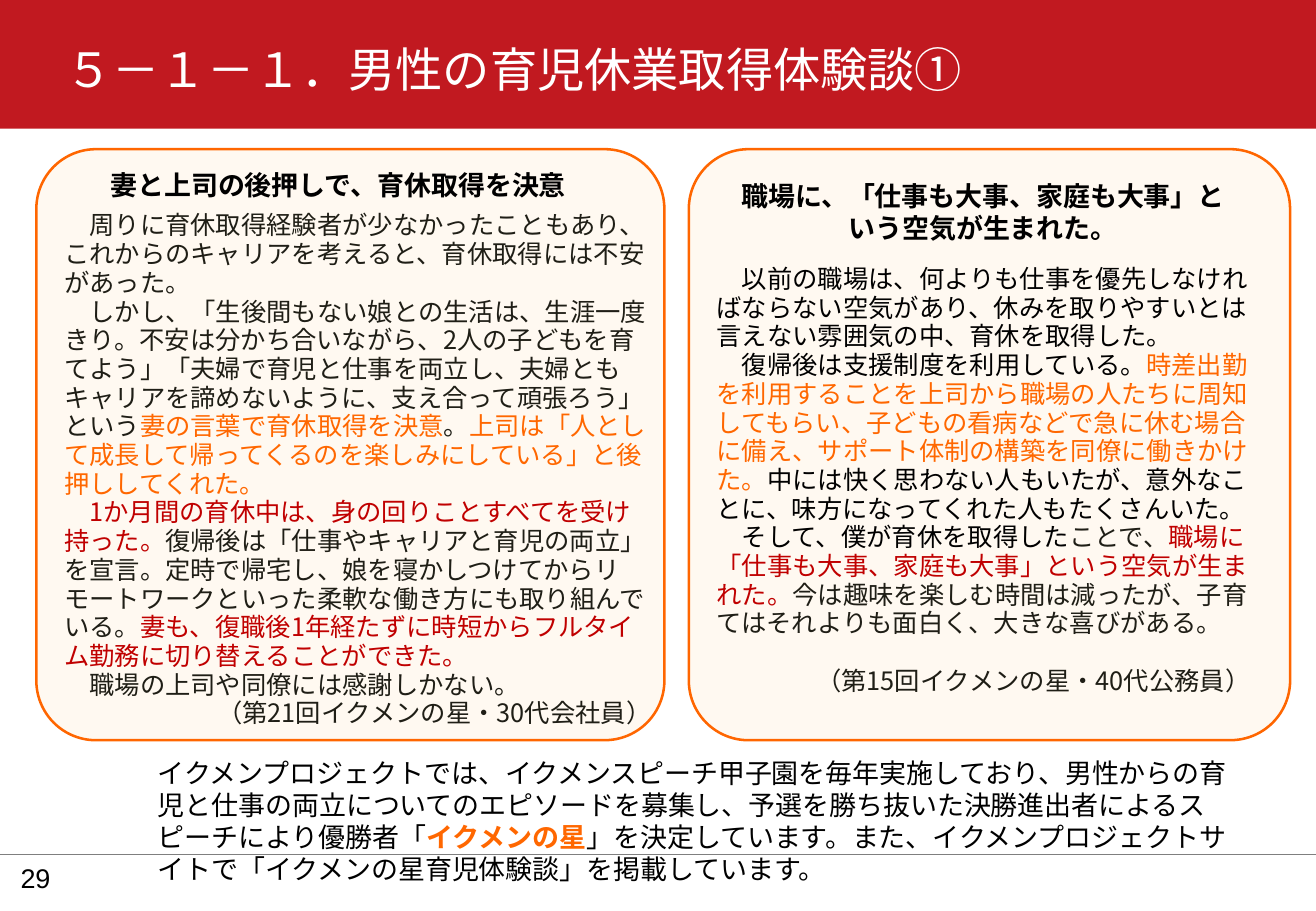
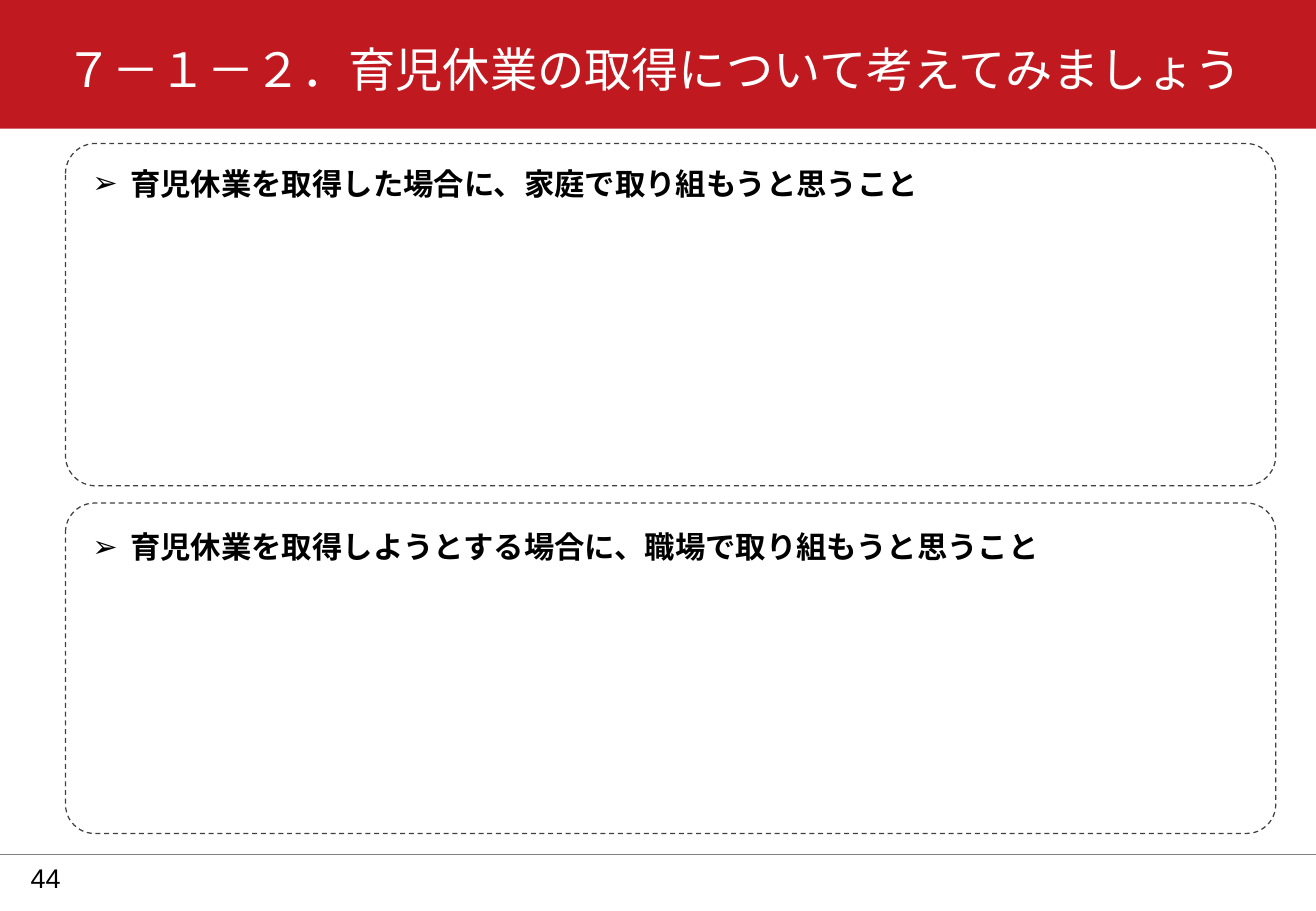
"""Build two slides on childcare leave: experience stories and a reflection sheet."""
from dataclasses import dataclass

from lxml import etree
from pptx import Presentation
from pptx.dml.color import RGBColor
from pptx.enum.dml import MSO_LINE
from pptx.enum.lang import MSO_LANGUAGE_ID
from pptx.enum.shapes import MSO_CONNECTOR, MSO_SHAPE
from pptx.enum.text import MSO_ANCHOR, MSO_AUTO_SIZE, PP_ALIGN
from pptx.oxml.ns import qn
from pptx.util import Cm, Pt

ROUNDED, RECTANGLE = MSO_SHAPE.ROUNDED_RECTANGLE, MSO_SHAPE.RECTANGLE
STRAIGHT, DASH = MSO_CONNECTOR.STRAIGHT, MSO_LINE.DASH
TOP, MIDDLE = MSO_ANCHOR.TOP, MSO_ANCHOR.MIDDLE
LEFT, CENTER, RIGHT = PP_ALIGN.LEFT, PP_ALIGN.CENTER, PP_ALIGN.RIGHT
FIXED = MSO_AUTO_SIZE.NONE
JAPANESE = MSO_LANGUAGE_ID.JAPANESE


@dataclass(frozen=True)
class Style:
    size: float
    leading: float
    bold: bool = False
    latin: str = "Noto Sans CJK JP"


@dataclass(frozen=True)
class Theme:
    red: str = "C11920"
    white: str = "FFFFFF"
    black: str = "000000"
    ink: str = "1F1E16"
    orange: str = "FF6700"
    crimson: str = "C00000"
    card_fill: str = "FFECD3"
    card_line: str = "FF6600"
    dash_line: str = "404040"
    rule: str = "7F7F7F"
    east_asian: str = "Noto Sans CJK JP"
    title: Style = Style(28, 36, latin="Arial")
    number: Style = Style(16, 19, latin="Arial")
    heading: Style = Style(16, 19, True)
    story: Style = Style(15, 17)
    closing: Style = Style(16, 19)
    prompt: Style = Style(18, 23, True)


THEME = Theme()
BLACK, INK, ORANGE, CRIMSON = THEME.black, THEME.ink, THEME.orange, THEME.crimson

WIDTH, HEIGHT = 27.51, 19.05
BAND_HEIGHT, RULE_TOP = 2.69, 17.86
TITLE_AREA = (1.37, 0.76, 26.14, 1.8)
TITLE_INSETS = (0, 0, 0, 0.15)
NUMBER_INSETS = (0, 0.13, 0, 0.13)
TEXT_INSETS = (0.25, 0.13, 0.25, 0.13)
PROMPT_INSETS = (0, 0.15, 0, 0.15)
CLOSING_AREA = (3.05, 15.7, 23.09, 3.2)
STORY_INDENT, BULLET_INDENT = 0.53, 0.79

STORY_PAGE = {"title": "５－１－１．男性の育児休業取得体験談①", "number": "29", "number_left": 0.43}
PROMPT_PAGE = {"title": "７－１－２．育児休業の取得について考えてみましょう", "number": "44", "number_left": 0.64}

STORIES = [
    {
        "card": (0.76, 3.12, 13.13, 12.36),
        "heading_area": (1.73, 3.4, 10.69, 1.1),
        "story_area": (1.09, 4.29, 12.78, 10.6),
        "heading": "妻と上司の後押しで、育休取得を決意",
        "paragraphs": [
            [("周りに育休取得経験者が少なかったこともあり、これからのキャリアを考えると、育休取得には不安があった。", INK)],
            [("しかし、「生後間もない娘との生活は、生涯一度きり。不安は分かち合いながら、2人の子どもを育てよう」"
              "「夫婦で育児と仕事を両立し、夫婦ともキャリアを諦めないように、支え合って頑張ろう」という", INK),
             ("妻の言葉で育休取得を決意", ORANGE),
             ("。", INK),
             ("上司は「人として成長して帰ってくるのを楽しみにしている」と後押ししてくれた。", ORANGE)],
            [("1か月間の育休中は、身の回りことすべてを受け持った。", CRIMSON),
             ("復帰後は「仕事やキャリアと育児の両立」を宣言。定時で帰宅し、娘を寝かしつけてから"
              "リモートワークといった柔軟な働き方にも取り組んでいる。", INK),
             ("妻も、復職後1年経たずに時短からフルタイム勤務に切り替えることができた。", CRIMSON)],
            [("職場の上司や同僚には感謝しかない。", INK)],
        ],
        "source": "（第21回イクメンの星・30代会社員）",
        "source_gap": 0,
    },
    {
        "card": (14.4, 3.12, 12.57, 12.36),
        "heading_area": (15.21, 3.63, 10.69, 1.7),
        "story_area": (14.73, 5.41, 11.66, 9.4),
        "heading": "職場に、「仕事も大事、家庭も大事」という空気が生まれた。",
        "paragraphs": [
            [("以前の職場は、何よりも仕事を優先しなければならない空気があり、休みを取りやすいとは言えない"
              "雰囲気の中、育休を取得した。", BLACK)],
            [("復帰後は支援制度を利用している。", BLACK),
             ("時差出勤を利用することを上司から職場の人たちに周知してもらい、子どもの看病などで急に休む場合に備え、"
              "サポート体制の構築を同僚に働きかけた。", ORANGE),
             ("中には快く思わない人もいたが、意外なことに、味方になってくれた人もたくさんいた。", BLACK)],
            [("そして、僕が育休を取得した", BLACK),
             ("ことで、", INK),
             ("職場に「仕事も大事、家庭も大事」という空気が生まれた。", CRIMSON),
             ("今は趣味を楽しむ時間は減ったが、子育てはそれよりも面白く、大きな喜びがある。", INK)],
        ],
        "source": "（第15回イクメンの星・40代公務員）",
        "source_gap": THEME.story.leading,
    },
]

CLOSING = [
    ("イクメンプロジェクトでは、イクメンスピーチ甲子園を毎年実施しており、男性からの育児と仕事の両立についての"
     "エピソードを募集し、予選を勝ち抜いた決勝進出者によるスピーチにより優勝者「", BLACK),
    ("イクメンの星", ORANGE, True),
    ("」を決定しています。また、イクメンプロジェクトサイトで「イクメンの星育児体験談」を掲載しています。", BLACK),
]

PROMPTS = [
    {"panel": (1.37, 3.0, 25.3, 7.16), "text_area": (1.93, 3.25, 23.5, 1.65),
     "text": "育児休業を取得した場合に、家庭で取り組もうと思うこと"},
    {"panel": (1.37, 10.52, 25.3, 6.91), "text_area": (1.93, 10.85, 23.5, 1.65),
     "text": "育児休業を取得しようとする場合に、職場で取り組もうと思うこと"},
]


def rgb(value):
    return RGBColor.from_string(value)


def lengths(area):
    return [Cm(value) for value in area]


def place(shape, area):
    shape.left, shape.top, shape.width, shape.height = lengths(area)


def prepare(box, insets, anchor=TOP):
    frame = box.text_frame
    frame.word_wrap = True
    frame.auto_size = FIXED
    frame.vertical_anchor = anchor
    frame.margin_left, frame.margin_top, frame.margin_right, frame.margin_bottom = lengths(insets)
    return frame


def write(frame, paragraphs, style):
    """Fill a frame from (spans, options) pairs."""
    for index, (spans, options) in enumerate(paragraphs):
        para = frame.add_paragraph() if index else frame.paragraphs[0]
        properties = para._p.get_or_add_pPr()
        properties.set("marL", str(Cm(options.get("margin", 0))))
        properties.set("indent", str(Cm(options.get("indent", 0))))
        bullet = options.get("bullet")
        if bullet:
            etree.SubElement(properties, qn("a:buFont"), typeface="Arial")
            etree.SubElement(properties, qn("a:buChar"), char=bullet)
        else:
            etree.SubElement(properties, qn("a:buNone"))
        para.alignment = options.get("align", LEFT)
        para.line_spacing = Pt(style.leading)
        para.space_before = Pt(options.get("gap", 0))
        for text, color, *bold in spans:
            span = para.add_run()
            span.text = text
            font = span.font
            font.name = style.latin
            font.size = Pt(style.size)
            font.bold = bold[0] if bold else style.bold
            font.language_id = JAPANESE
            font.color.rgb = rgb(color)
            etree.SubElement(span._r.get_or_add_rPr(), qn("a:ea"), typeface=THEME.east_asian)


def add_text(page, area, paragraphs, style, insets=TEXT_INSETS, anchor=TOP):
    box = page.shapes.add_textbox(*lengths(area))
    write(prepare(box, insets, anchor), paragraphs, style)


def fill_body(page, index, area, paragraphs, style, insets=TEXT_INSETS):
    body = page.placeholders[index]
    place(body, area)
    write(prepare(body, insets), paragraphs, style)


def add_panel(page, area, corner, line, weight):
    """Add an unfilled rounded panel behind the text."""
    panel = page.shapes.add_shape(ROUNDED, *lengths(area))
    panel.adjustments[0] = corner
    panel.shadow.inherit = False
    panel.fill.background()
    panel.line.color.rgb = rgb(line)
    panel.line.width = Pt(weight)
    page.shapes.element.insert(2, panel.element)
    return panel


def dress_layout(layout, page):
    """Move the red band and the footer rule into the layout."""
    band = page.shapes.add_shape(RECTANGLE, *lengths((0, 0, WIDTH, BAND_HEIGHT)))
    band.shadow.inherit = False
    band.fill.solid()
    band.fill.fore_color.rgb = rgb(THEME.red)
    band.line.fill.background()
    rule = page.shapes.add_connector(STRAIGHT, *lengths((0, RULE_TOP, WIDTH, RULE_TOP)))
    rule.line.color.rgb = rgb(THEME.rule)
    rule.line.width = Pt(0.25)
    etree.SubElement(rule.element.spPr, qn("a:effectLst"))
    for number, shape in enumerate((band, rule), 101):
        shape.element.xpath(".//p:cNvPr")[0].set("id", str(number))
        layout.shapes.element.insert(2, shape.element)
    title = layout.placeholders[0]
    place(title, TITLE_AREA)
    prepare(title, TITLE_INSETS)


def add_page(deck, layout, content):
    page = deck.slides.add_slide(layout)
    title = prepare(page.shapes.title, TITLE_INSETS)
    write(title, [([(content["title"], THEME.white)], {})], THEME.title)
    add_text(page, (content["number_left"], RULE_TOP, 1.02, 0.99),
             [([(content["number"], BLACK)], {})], THEME.number, NUMBER_INSETS, MIDDLE)
    return page


def build_stories(page):
    for index, story in enumerate(STORIES, 1):
        card = add_panel(page, story["card"], 0.101, THEME.card_line, 1.5)
        card.fill.solid()
        card.fill.fore_color.rgb = rgb(THEME.card_fill)
        color = card.element.spPr.find(qn("a:solidFill")).find(qn("a:srgbClr"))
        etree.SubElement(color, qn("a:alpha"), val="30000")
        add_text(page, story["heading_area"],
                 [([(story["heading"], BLACK)], {"align": CENTER})], THEME.heading)
        paragraphs = [(spans, {"indent": STORY_INDENT}) for spans in story["paragraphs"]]
        paragraphs.append(([(story["source"], INK)], {"align": RIGHT, "gap": story["source_gap"]}))
        fill_body(page, index, story["story_area"], paragraphs, THEME.story)
    add_text(page, CLOSING_AREA, [(CLOSING, {})], THEME.closing)


def build_prompts(page):
    options = {"bullet": "➢", "margin": BULLET_INDENT, "indent": -BULLET_INDENT}
    for index, prompt in enumerate(PROMPTS, 1):
        panel = add_panel(page, prompt["panel"], 0.088, THEME.dash_line, 0.75)
        panel.line.dash_style = DASH
        fill_body(page, index, prompt["text_area"],
                  [([(prompt["text"], BLACK)], options)], THEME.prompt, PROMPT_INSETS)


def main():
    deck = Presentation()
    deck.slide_width, deck.slide_height = Cm(WIDTH), Cm(HEIGHT)
    layout = deck.slide_layouts.get_by_name("Two Content")
    story_page = add_page(deck, layout, STORY_PAGE)
    dress_layout(layout, story_page)
    build_stories(story_page)
    build_prompts(add_page(deck, layout, PROMPT_PAGE))
    deck.save("out.pptx")


if __name__ == "__main__":
    main()
